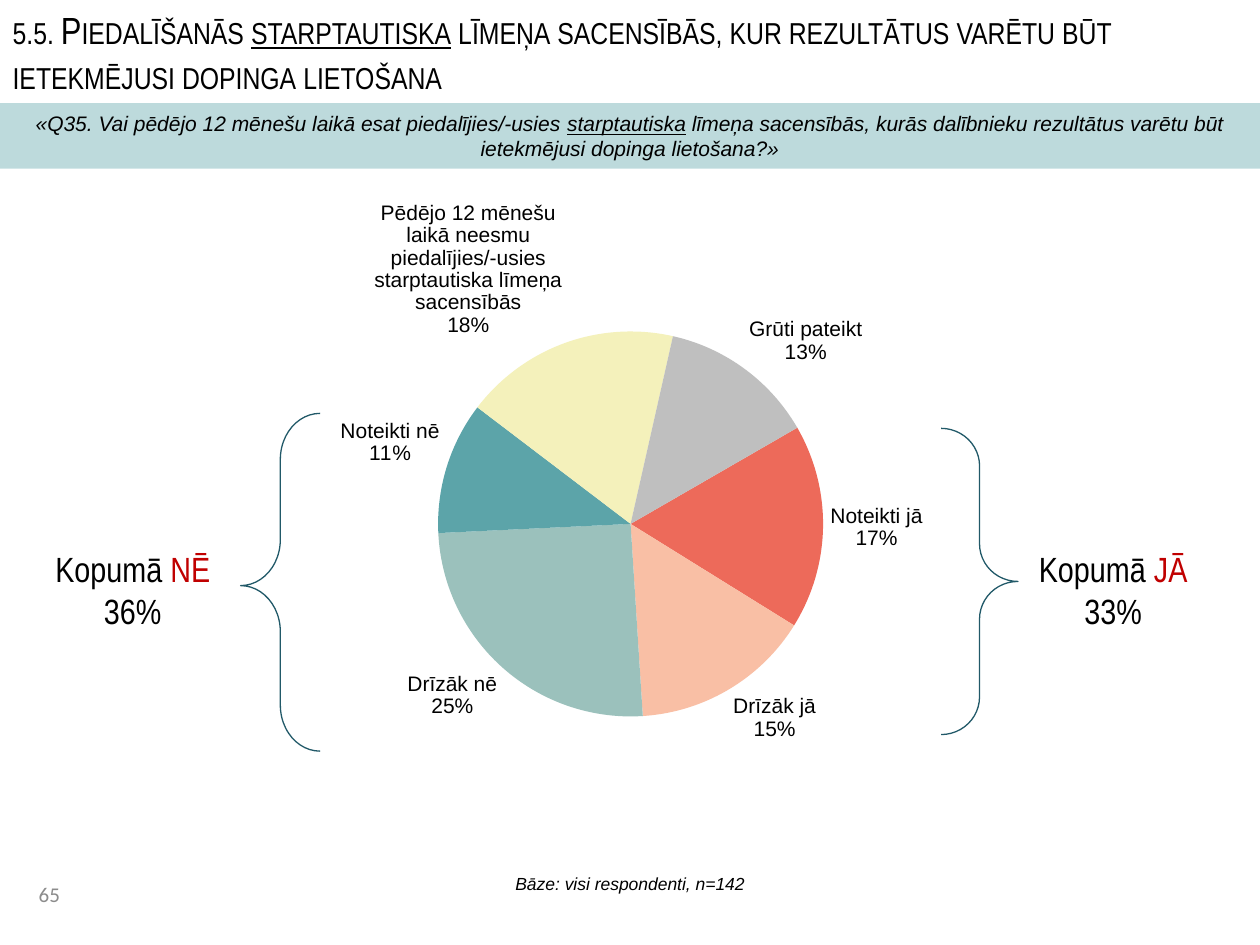
import pptx
import pptx.chart.data
import pptx.dml.color
import pptx.enum.chart
import pptx.enum.shapes
import pptx.enum.text
import pptx.oxml
import pptx.oxml.ns
import pptx.util

Pt = pptx.util.Pt
qn = pptx.oxml.ns.qn
ALIGN = pptx.enum.text.PP_ALIGN
ANCHOR = pptx.enum.text.MSO_ANCHOR
SHAPE = pptx.enum.shapes.MSO_SHAPE

COLORS = {
    "text": "000000", "number": "8C8C8C", "accent": "C00000",
    "band": "5CA4A9", "brace": "215968",
}

# Content: runs are (text, format), format being "", "underline" or "accent"
TITLE = [
    ("5.5. Piedalīšanās ", ""),
    ("starptautiska", "underline"),
    (" līmeņa sacensībās, kur rezultātus varētu būt ietekmējusi dopinga lietošana", ""),
]
QUESTION = [
    ("«Q35. Vai pēdējo 12 mēnešu laikā esat piedalījies/-usies ", ""),
    ("starptautiska", "underline"),
    (" līmeņa sacensībās, kurās dalībnieku rezultātus varētu būt "
     "ietekmējusi dopinga lietošana?»", ""),
]
BASE = [("Bāze: visi respondenti, n=142", "")]
PAGE = [("65", "")]
ANSWERS = [
    ("Noteikti jā", 17, "ED6A5A"),
    ("Drīzāk jā", 15, "F9BFA5"),
    ("Drīzāk nē", 25, "9BC1BC"),
    ("Noteikti nē", 11, "5CA4A9"),
    ("Pēdējo 12 mēnešu laikā neesmu piedalījies/-usies starptautiska līmeņa sacensībās",
     18, "F4F1BB"),
    ("Grūti pateikt", 13, "BFBFBF"),
]
# Answer, total, text left, brace kind, brace box, brace adjustments
TOTALS = [
    ("NĒ", "36%", 19.4, SHAPE.LEFT_BRACE, (137.5, 236.2, 45.4, 193), (0.58, 0.51)),
    ("JĀ", "33%", 579.6, SHAPE.RIGHT_BRACE, (537.8, 244.8, 43.9, 175), (0.49, 0.5)),
]
PLOT = {"x": 0.285, "y": 0.233, "w": 0.4, "h": 0.684}


def rgb(hex_color):
    return pptx.dml.color.RGBColor.from_string(hex_color)


def write(frame, paragraphs, size, font, color="text", align=ALIGN.LEFT,
          anchor=ANCHOR.TOP, italic=False):
    frame.word_wrap = True
    frame.vertical_anchor = anchor
    for index, runs in enumerate(paragraphs):
        paragraph = frame.add_paragraph() if index else frame.paragraphs[0]
        paragraph.alignment = align
        paragraph.font.size = Pt(size)
        paragraph.font.name = font
        paragraph.font.italic = italic
        paragraph.font.color.rgb = rgb(COLORS[color])
        for text, style in runs:
            run = paragraph.add_run()
            run.text = text
            if style == "underline":
                run.font.underline = True
            elif style == "accent":
                run.font.color.rgb = rgb(COLORS["accent"])


def add_text(slide, box, paragraphs, size, font, **options):
    frame = slide.shapes.add_textbox(*map(Pt, box)).text_frame
    write(frame, paragraphs, size, font, **options)


def add_pie(slide):
    data = pptx.chart.data.CategoryChartData()
    data.categories = [name for name, _, _ in ANSWERS]
    data.add_series("Series 1", [value for _, value, _ in ANSWERS])
    chart = slide.shapes.add_chart(
        pptx.enum.chart.XL_CHART_TYPE.PIE, *map(Pt, (93.6, 90.7, 550, 363)), data).chart
    chart.has_title = False
    chart.has_legend = False
    chart.font.size = Pt(10)
    chart.font.name = "Arial"
    chart.font.color.rgb = rgb(COLORS["text"])

    pie = chart.plots[0]
    pie.vary_by_categories = True
    shares = pie.series[0]
    for index, (_, _, color) in enumerate(ANSWERS):
        fill = shares.points[index].format.fill
        fill.solid()
        fill.fore_color.rgb = rgb(color)

    labels = shares.data_labels
    labels.show_category_name = True
    labels.show_percentage = True
    labels.show_value = False
    labels.number_format = "0%"
    labels.number_format_is_linked = False
    labels.position = pptx.enum.chart.XL_LABEL_POSITION.OUTSIDE_END
    labels.font.size = Pt(12)
    labels.font.name = "Arial"
    labels.font.color.rgb = rgb(COLORS["text"])

    # Rotation of the first slice and place of the pie inside the chart
    pie._element.append(pptx.oxml.parse_xml(
        f'<c:firstSliceAng {pptx.oxml.ns.nsdecls("c")} val="60"/>'))
    plot_area = pie._element.getparent()
    for old_layout in plot_area.findall(qn("c:layout")):
        plot_area.remove(old_layout)
    modes = "".join(f'<c:{key}Mode val="edge"/>' for key in "xy")
    sizes = "".join(f'<c:{key} val="{value}"/>' for key, value in PLOT.items())
    plot_area.insert(0, pptx.oxml.parse_xml(
        f'<c:layout {pptx.oxml.ns.nsdecls("c")}><c:manualLayout>'
        f'<c:layoutTarget val="inner"/>{modes}{sizes}</c:manualLayout></c:layout>'))


def main():
    deck = pptx.Presentation()
    deck.slide_width, deck.slide_height = Pt(720), Pt(540)
    slide = deck.slides.add_slide(deck.slide_layouts[5])

    # Title in small capitals
    title = slide.shapes.title
    title.left, title.top, title.width, title.height = map(Pt, (0, 0, 720, 59))
    write(title.text_frame, [TITLE], 21.6, "Arial Narrow", anchor=ANCHOR.MIDDLE)
    title.text_frame.auto_size = pptx.enum.text.MSO_AUTO_SIZE.NONE
    for run in title.text_frame.paragraphs[0].runs:
        run.font._element.set("cap", "small")

    # Page number and base
    add_text(slide, (15, 500.4, 76, 29), [PAGE], 12, "Calibri", color="number")
    add_text(slide, (0, 488, 720, 34), [BASE], 10, "Arial", align=ALIGN.CENTER,
             anchor=ANCHOR.MIDDLE, italic=True)

    # Question band
    band = slide.shapes.add_shape(SHAPE.RECTANGLE, *map(Pt, (0, 59, 720, 37.4)))
    band.shadow.inherit = False
    band.fill.solid()
    band.fill.fore_color.rgb = rgb(COLORS["band"])
    band_color = band._element.spPr.find(qn("a:solidFill"))[0]
    band_color.append(pptx.oxml.parse_xml(
        f'<a:alpha {pptx.oxml.ns.nsdecls("a")} val="40000"/>'))
    band.line.fill.background()
    write(band.text_frame, [QUESTION], 12, "Arial", align=ALIGN.CENTER,
          anchor=ANCHOR.MIDDLE, italic=True)

    add_pie(slide)

    # Braces with the totals
    for answer, total, left, kind, box, adjustments in TOTALS:
        brace = slide.shapes.add_shape(kind, *map(Pt, box))
        brace.shadow.inherit = False
        brace.fill.background()
        brace.line.color.rgb = rgb(COLORS["brace"])
        brace.line.width = Pt(0.75)
        for index, value in enumerate(adjustments):
            brace.adjustments[index] = value
        add_text(slide, (left, 309.6, 113, 55.4),
                 [[("Kopumā ", ""), (answer, "accent")], [(total, "")]],
                 20, "Arial Narrow", align=ALIGN.CENTER)

    deck.save("out.pptx")


if __name__ == "__main__":
    main()
